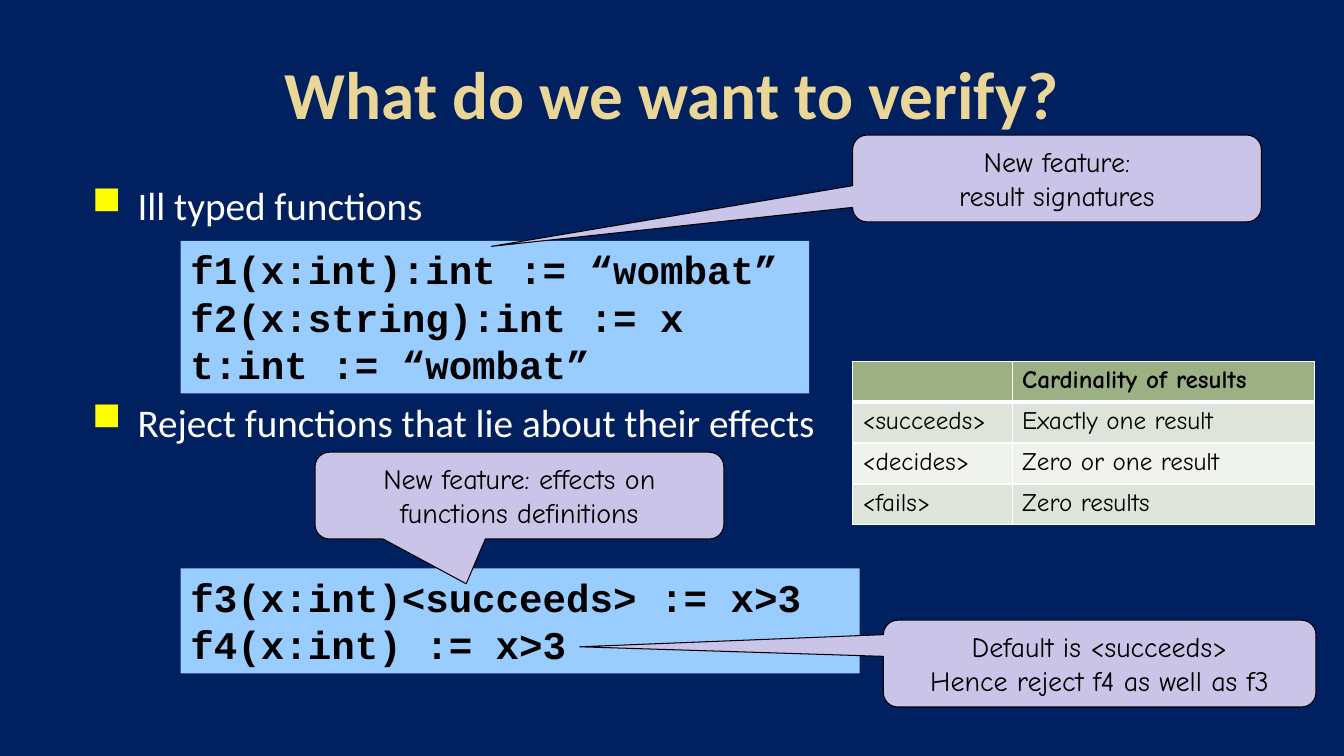
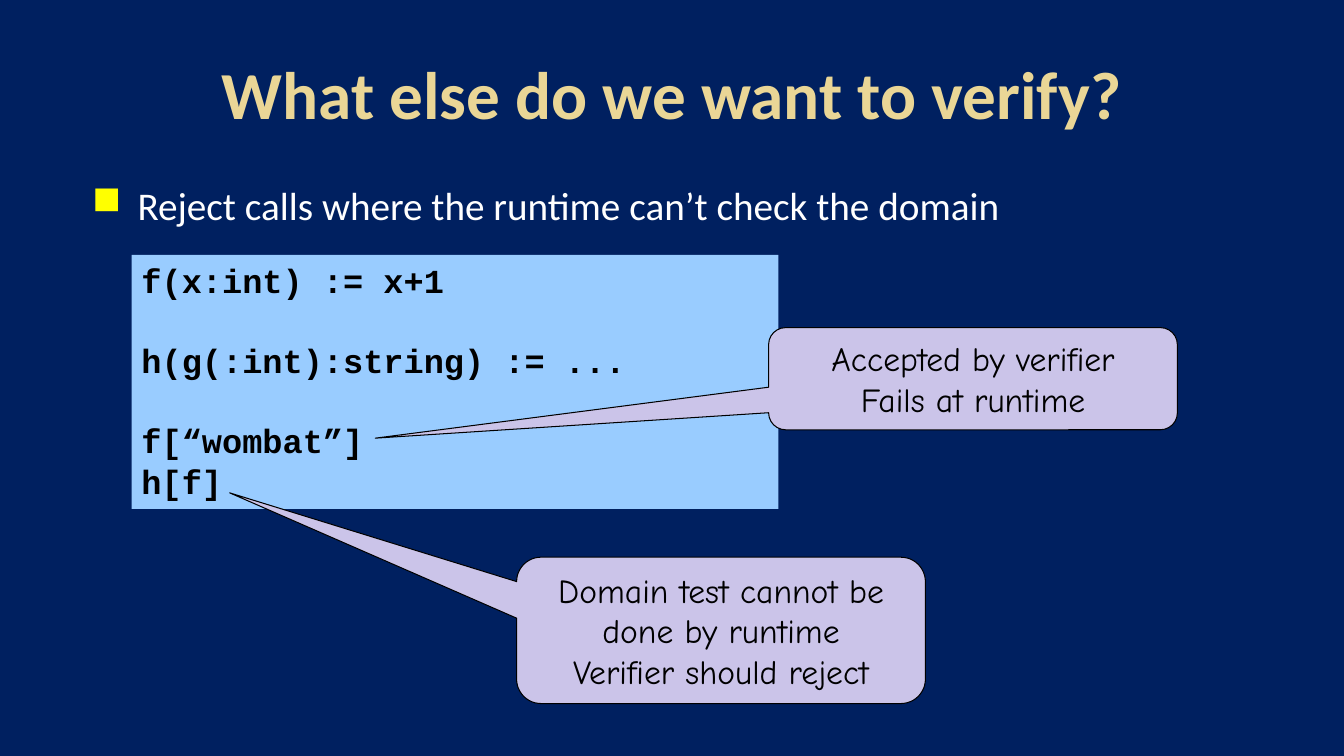
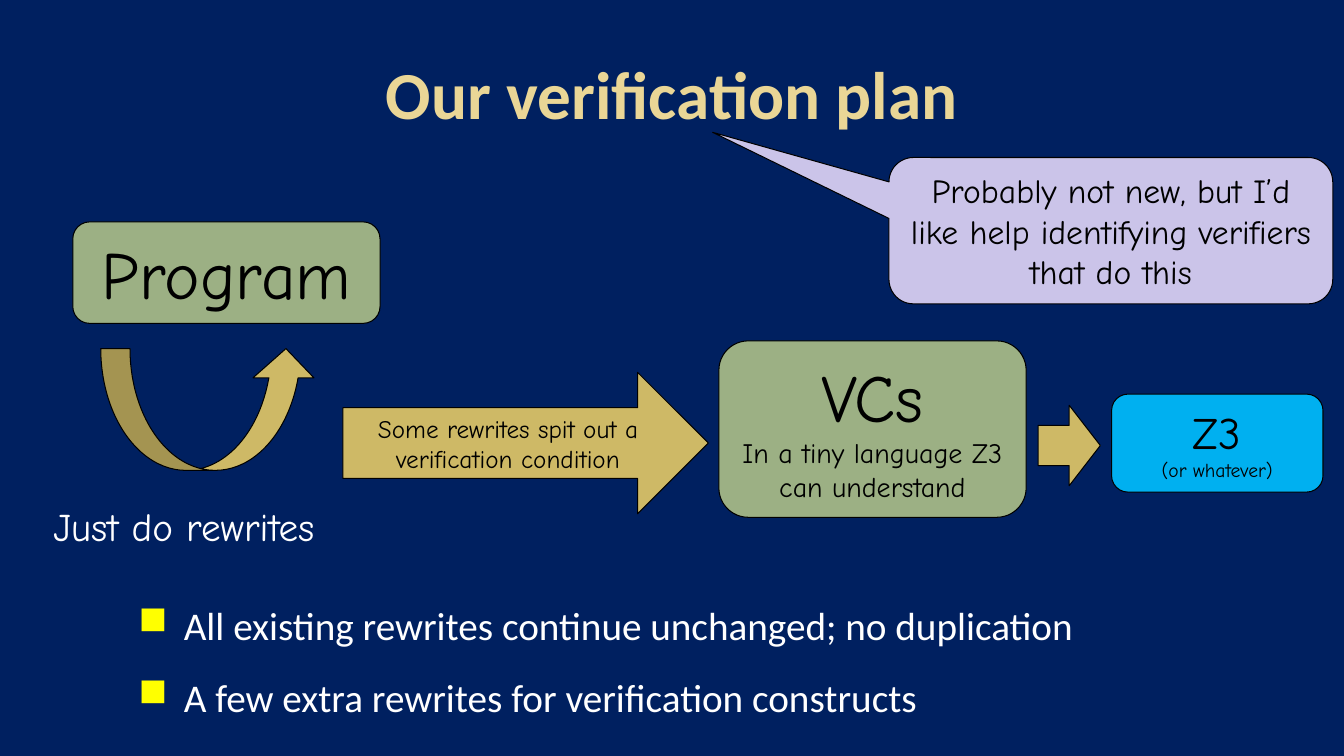
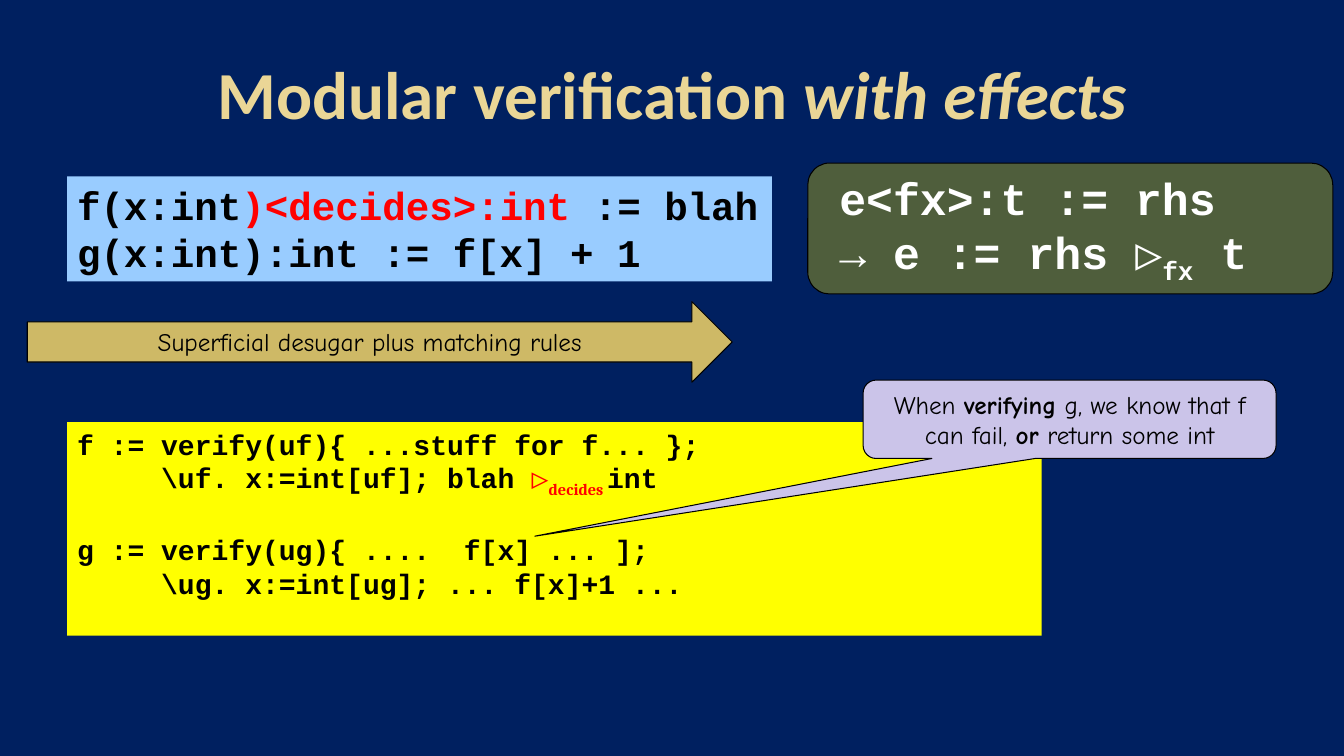
from dataclasses import dataclass, replace
from typing import NamedTuple, Optional, Union

from lxml.etree import SubElement
from pptx import Presentation
from pptx.dml.color import RGBColor
from pptx.enum.shapes import MSO_SHAPE as Shape
from pptx.enum.text import MSO_ANCHOR as Anchor, PP_ALIGN as Align
from pptx.oxml.ns import qn
from pptx.util import Pt

COLORS = {
    "navy": "002060", "gold": "EAD696", "white": "FFFFFF", "black": "000000",
    "yellow": "FFFF00", "red": "FF0000", "code": "99CCFF", "callout": "CBC4E9",
    "green": "9CB084", "olive": "4F5E3C", "arrow": "CEB966", "solver": "00B0F0",
    "band_dark": "DEE4D9", "band_light": "EFF2ED",
}
BULLET_INDENT, BULLET_HANG = 43.2, 32.4


class Box(NamedTuple):
    left: float
    top: float
    width: float
    height: float


class Point(NamedTuple):
    x: float
    y: float


@dataclass(frozen=True)
class Style:
    name: str
    size: float
    color: str = "black"
    bold: bool = False
    italic: bool = False
    baseline: int = 0


@dataclass(frozen=True)
class Span:
    text: str
    style: Style


@dataclass(frozen=True)
class Line:
    """A paragraph; plain strings in it take the style of the whole text."""
    spans: tuple[Union[str, Span], ...]
    before: float = 0
    bullet: bool = False


@dataclass(frozen=True)
class Callout:
    box: Box
    tip: Point
    size: float
    lines: tuple


TITLE = Style("Calibri", 48, "gold", bold=True)
BODY = Style("Calibri", 28, "white")
CODE = Style("Courier New", 28, bold=True)
SMALL_CODE = replace(CODE, size=20)
NOTE = Style("Comic Neue", 18)
NOTE_BOLD = replace(NOTE, bold=True)

CALLOUTS = {
    "verify": (
        Callout(Box(631, 443, 309, 62), Point(414, 462), 20,
                ("Default is <succeeds>", "Hence reject f4 as well as f3")),
        Callout(Box(609, 96.5, 292, 62), Point(351, 176), 20,
                ("New feature:", "result signatures")),
        Callout(Box(225, 323, 292, 62), Point(333, 417), 20,
                ("New feature: effects on functions definitions",)),
    ),
    "domain": (
        Callout(Box(549, 234, 292, 73), Point(268, 313), 24,
                ("Accepted by verifier", "Fails at runtime")),
        Callout(Box(369, 398, 292, 104.5), Point(164, 352), 24,
                ("Domain test cannot be done by runtime", "Verifier should reject")),
    ),
    "plan": (
        Callout(Box(635, 112.5, 317, 104.5), Point(509, 94.5), 24,
                ("Probably not new, but I’d like help identifying verifiers that do this",)),
    ),
    "effects": (
        Callout(Box(616.5, 271.5, 295, 56), Point(382, 383), 18,
                (Line(("When ", Span("verifying", NOTE_BOLD),
                       " g, we know that f can fail, ", Span("or", NOTE_BOLD),
                       " return some int")),)),
    ),
}
CARDINALITIES = (
    ("", "Cardinality of results"),
    ("<succeeds>", "Exactly one result"),
    ("<decides>", "Zero or one result"),
    ("<fails>", "Zero results"),
)


def rgb(color: str) -> RGBColor:
    return RGBColor.from_string(COLORS[color])


def points(values) -> list:
    return [Pt(value) for value in values]


def add_span(para, text: str, style: Style) -> None:
    span = para.add_run()
    span.text = text
    formats = {"name": style.name, "size": Pt(style.size),
               "bold": style.bold, "italic": style.italic}
    for attribute, value in formats.items():
        setattr(span.font, attribute, value)
    span.font.color.rgb = rgb(style.color)
    if style.baseline:
        span._r.get_or_add_rPr().set("baseline", str(style.baseline * 1000))


def add_bullet(para) -> None:
    properties = para._p.get_or_add_pPr()
    properties.set("marL", str(Pt(BULLET_INDENT)))
    properties.set("indent", str(-Pt(BULLET_HANG)))
    color = SubElement(properties, qn("a:buClr"))
    SubElement(color, qn("a:srgbClr"), val=COLORS["yellow"])
    SubElement(properties, qn("a:buChar"), char="■")


def write(frame, lines, style: Style, align=Align.LEFT, anchor=Anchor.TOP) -> None:
    frame.word_wrap = True
    frame.vertical_anchor = anchor
    for index, item in enumerate(lines):
        line = item if isinstance(item, Line) else Line((item,))
        para = frame.paragraphs[0] if index == 0 else frame.add_paragraph()
        para.alignment = align
        if line.bullet:
            add_bullet(para)
        if line.before:
            para.space_before = Pt(line.before)
        for piece in line.spans:
            span = piece if isinstance(piece, Span) else Span(piece, style)
            add_span(para, span.text, span.style)


def add_text(page, box: Box, lines, style: Style, **layout):
    frame = page.shapes.add_textbox(*points(box)).text_frame
    write(frame, lines, style, **layout)
    return frame


def add_figure(page, kind, box: Box, fill: str, lines=(), style: Style = NOTE,
               outline: Optional[str] = "black", align=Align.CENTER, anchor=Anchor.MIDDLE):
    figure = page.shapes.add_shape(kind, *points(box))
    figure.shadow.inherit = False
    figure.fill.solid()
    figure.fill.fore_color.rgb = rgb(fill)
    if outline:
        figure.line.color.rgb = rgb(outline)
        figure.line.width = Pt(0.75)
    else:
        figure.line.fill.background()
    write(figure.text_frame, lines, style, align, anchor)
    return figure


def add_code(page, box: Box, lines, style: Style = CODE, fill: str = "code") -> None:
    add_figure(page, Shape.RECTANGLE, box, fill, lines, style,
               outline=None, align=Align.LEFT, anchor=Anchor.TOP)


def add_callouts(page, callouts: tuple[Callout, ...]) -> None:
    for callout in callouts:
        box, tip = callout.box, callout.tip
        bubble = add_figure(page, Shape.ROUNDED_RECTANGULAR_CALLOUT, box, "callout",
                            callout.lines, replace(NOTE, size=callout.size))
        bubble.adjustments[0] = (tip.x - box.left) / box.width - 0.5
        bubble.adjustments[1] = (tip.y - box.top) / box.height - 0.5


def add_borders(cell, bottom: float) -> None:
    properties = cell._tc.get_or_add_tcPr()
    for side, width in {"L": 1, "R": 1, "T": 1, "B": bottom}.items():
        border = SubElement(properties, qn(f"a:ln{side}"), w=str(Pt(width)))
        fill = SubElement(border, qn("a:solidFill"))
        SubElement(fill, qn("a:srgbClr"), val=COLORS["white"])


def add_cardinality_table(page) -> None:
    widths, row_height = (114, 216), 29.25
    box = Box(609, 258, sum(widths), row_height * len(CARDINALITIES))
    table = page.shapes.add_table(len(CARDINALITIES), len(widths), *points(box)).table
    for column, width in zip(table.columns, widths):
        column.width = Pt(width)
    for index, texts in enumerate(CARDINALITIES):
        header = index == 0
        band = "green" if header else "band_dark" if index % 2 else "band_light"
        for cell, text in zip(table.rows[index].cells, texts):
            add_borders(cell, bottom=3 if header else 1)
            cell.fill.solid()
            cell.fill.fore_color.rgb = rgb(band)
            if text:
                write(cell.text_frame, (text,), NOTE_BOLD if header else NOTE)


def add_page(deck, *title):
    """Add a blank slide with the shared background and title."""
    page = deck.slides.add_slide(deck.slide_layouts[6])
    page.background.fill.solid()
    page.background.fill.fore_color.rgb = rgb("navy")
    add_text(page, Box(48, 21.5, 864, 90), (Line(title),), TITLE,
             align=Align.CENTER, anchor=Anchor.MIDDLE)
    return page


def build_verify(deck) -> None:
    page = add_page(deck, "What do we want to verify?")
    add_text(page, Box(48, 126, 864, 371), (
        Line(("Ill typed functions",), bullet=True),
        Line(("Reject functions that lie about their effects",), before=121, bullet=True),
    ), BODY)
    add_code(page, Box(129, 172, 449, 109), (
        "f1(x:int):int := “wombat”", "f2(x:string):int := x", "t:int := “wombat”"))
    add_code(page, Box(129, 406, 485, 75), (
        "f3(x:int)<succeeds> := x>3", "f4(x:int) := x>3"))
    add_cardinality_table(page)
    add_callouts(page, CALLOUTS["verify"])


def build_domain(deck) -> None:
    page = add_page(deck, "What else do we want to verify?")
    add_text(page, Box(48, 126, 864, 371), (
        Line(("Reject calls where the runtime can’t check the domain",), bullet=True),
    ), BODY)
    add_code(page, Box(94, 182, 462, 181.5), (
        "f(x:int) := x+1",
        Line(("h(g(:int):string) := ...",), before=28.5),
        Line(("f[“wombat”]",), before=28.5),
        "h[f]",
    ), replace(CODE, size=24))
    add_callouts(page, CALLOUTS["domain"])


def build_plan(deck) -> None:
    page = add_page(deck, "Our verification plan")
    heading = replace(NOTE, size=48)
    add_figure(page, Shape.ROUNDED_RECTANGLE, Box(52, 158.5, 219.5, 72.5), "green",
               ("Program",), heading)
    add_figure(page, Shape.ROUNDED_RECTANGLE, Box(794, 281.5, 151, 70), "solver",
               ("Z3", Span("(or whatever)", replace(NOTE, size=14))),
               replace(NOTE, size=32))
    loop = add_figure(page, Shape.CURVED_UP_ARROW, Box(72, 249, 154, 87), "arrow")
    for index, value in enumerate((0.24, 0.5, 0.24)):
        loop.adjustments[index] = value
    caption = add_text(page, Box(31, 355, 236, 41), ("Just do rewrites",),
                       replace(NOTE, size=28, color="white"))
    caption.word_wrap = False
    add_figure(page, Shape.ROUNDED_RECTANGLE, Box(513.5, 243.5, 219.5, 126), "green",
               ("VCs", Span("In a tiny language Z3 can understand", replace(NOTE, size=20))),
               heading)
    add_figure(page, Shape.RIGHT_ARROW, Box(245, 266, 261, 101), "arrow",
               ("Some rewrites spit out a verification condition",))
    add_figure(page, Shape.RIGHT_ARROW, Box(741.5, 289.5, 44.5, 57.5), "arrow")
    add_text(page, Box(81, 426, 840, 89), (
        Line(("All existing rewrites continue unchanged; no duplication",), bullet=True),
        Line(("A few extra rewrites for verification constructs",), before=18, bullet=True),
    ), BODY)
    add_callouts(page, CALLOUTS["plan"])


def build_effects(deck) -> None:
    page = add_page(deck, "Modular verification ",
                    Span("with effects", replace(TITLE, italic=True)))
    add_code(page, Box(48, 126, 503.5, 75), (
        Line(("f(x:int", Span(")<decides>:int", replace(CODE, color="red")), " := blah")),
        "g(x:int):int := f[x] + 1",
    ))
    red = replace(SMALL_CODE, color="red")
    add_code(page, Box(48, 301.5, 696, 152.5), (
        "f := verify(uf){ ...stuff for f... };",
        Line(("     \\uf. x:=int[uf]; blah ", Span("▷", red),
              Span("decides ", replace(red, name="Cambria", baseline=-25)), "int")),
        Line(("g := verify(ug){ ....  f[x] ... ];",), before=24),
        "     \\ug. x:=int[ug]; ... f[x]+1 ...",
    ), SMALL_CODE, fill="yellow")
    add_figure(page, Shape.RIGHT_ARROW, Box(19.5, 215.5, 503.5, 57.5), "arrow",
               ("Superficial desugar plus matching rules",))
    add_callouts(page, CALLOUTS["effects"])
    rule = replace(CODE, size=32, color="white")
    panel = add_figure(page, Shape.ROUNDED_RECTANGLE, Box(577, 116.5, 375, 93.5), "olive", (
        "e<fx>:t := rhs",
        Line(("→ e := rhs ▷", Span("fx", replace(rule, baseline=-25)), " t")),
    ), rule, align=Align.LEFT)
    panel.text_frame.margin_left = Pt(18)


def main() -> None:
    deck = Presentation()
    deck.slide_width, deck.slide_height = Pt(960), Pt(540)
    for build in (build_verify, build_domain, build_plan, build_effects):
        build(deck)
    deck.save("out.pptx")


if __name__ == "__main__":
    main()
